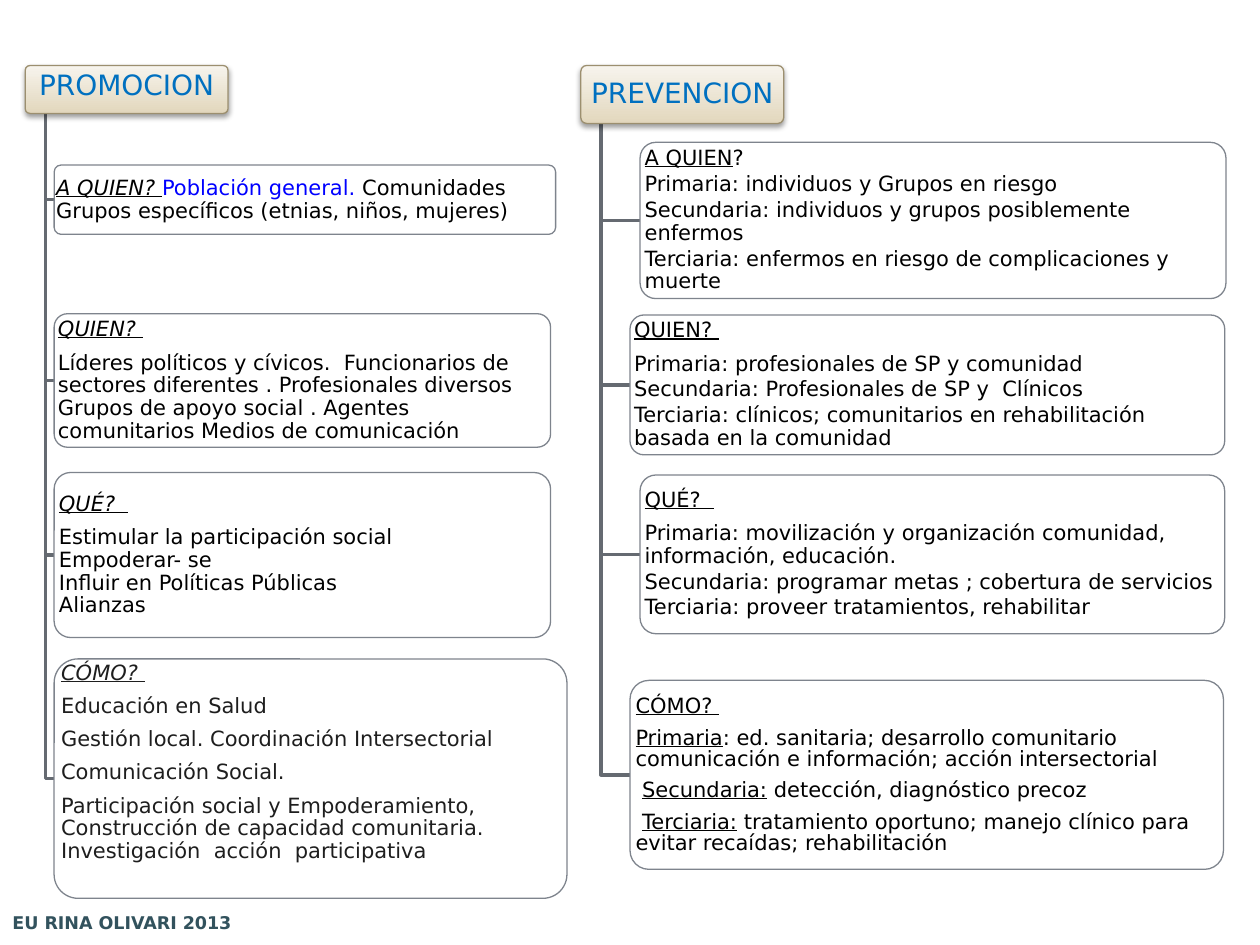
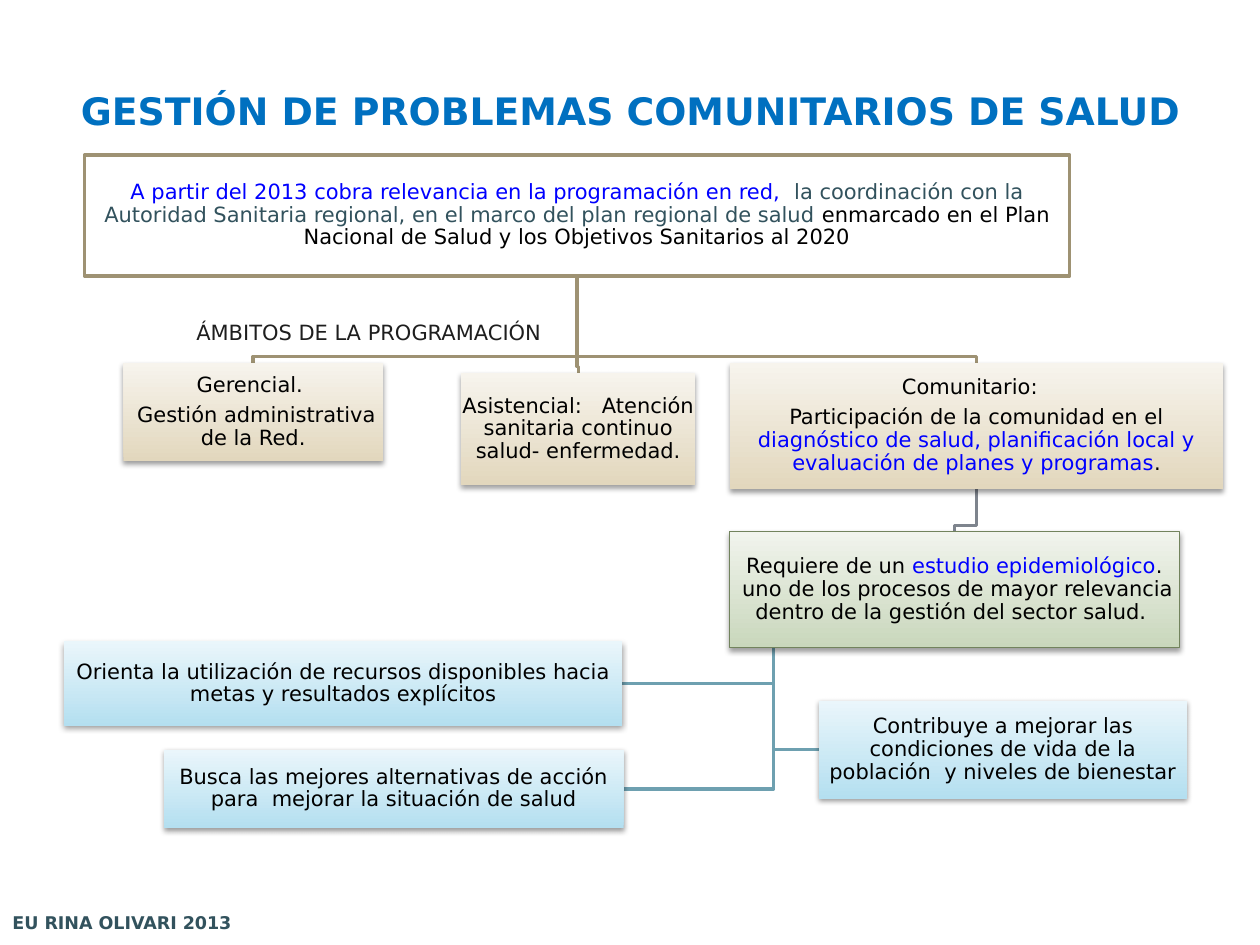
"""Build two slides on health promotion, prevention and community health management."""
import lxml.etree
import pptx
import pptx.dml.color
import pptx.enum.shapes
import pptx.enum.text
import pptx.oxml
import pptx.oxml.ns
import pptx.util

Inches, Pt = pptx.util.Inches, pptx.util.Pt
Color = pptx.dml.color.RGBColor.from_string
ALIGN = pptx.enum.text.PP_ALIGN
ANCHOR = pptx.enum.text.MSO_ANCHOR
SHAPE = pptx.enum.shapes.MSO_SHAPE

BEIGE = ("E2D7BD", "F7F4ED")
THEME = {
    "font": "DejaVu Sans",
    "sizes": {"title": 21.6, "heading": 16, "body": 12, "footer": 10},
    "runs": {
        "plain": {"color": "000000"},
        "dark": {"color": "1E1E1E"},
        "accent": {"color": "0000FF"},
        "muted": {"color": "32525D"},
        "heading": {"color": "0070C0"},
        "title": {"color": "0070C0", "bold": True},
        "footer": {"color": "32525D", "bold": True},
        "underlined": {"color": "000000", "underline": True},
        "question": {"color": "000000", "italic": True, "underline": True},
        "dark question": {"color": "1E1E1E", "italic": True, "underline": True},
    },
    "paragraphs": {
        "single": {},
        "fixed": {"line_spacing": Pt(13), "space_after": Pt(6)},
        "fixed tight": {"line_spacing": Pt(13), "space_after": Pt(0)},
        "compact": {"line_spacing": Pt(12), "space_after": Pt(6)},
        "loose": {"line_spacing": 0.9, "space_after": Pt(6)},
        "close": {"line_spacing": 0.9, "space_after": Pt(1.8)},
        "node": {"line_spacing": 0.9, "space_after": Pt(4.2)},
        "node tight": {"line_spacing": 0.9, "space_after": Pt(0)},
    },
    "looks": {
        "heading": {"round": True, "gradient": BEIGE, "line": ("9C8F6F", 0.75), "align": ALIGN.CENTER,
                    "inset": 0.02, "size": "heading"},
        "card": {"round": True, "fill": "FFFFFF", "line": ("7E848D", 0.75), "inset": 0},
        "tall card": {"round": True, "fill": "FFFFFF", "line": ("7E848D", 0.75), "inset": 0, "bottom": 0.26},
        "root": {"fill": "FFFFFF", "line": ("9E9273", 2), "align": ALIGN.CENTER},
        "scope": {"gradient": BEIGE, "align": ALIGN.CENTER},
        "study": {"gradient": ("C9D7BC", "F1F4ED"), "line": ("72835D", 0.75), "align": ALIGN.CENTER},
        "result": {"gradient": ("B4DFF0", "EAF6FB"), "align": ALIGN.CENTER},
        "label": {"inset": 0.1},
        "footer": {"inset": 0.1, "size": "footer"},
    },
    "elbows": {"column": "656A71", "root": "9E9273", "study": "7E848D", "result": "6EA0B0"},
}


def write_text(frame, paragraphs, size, align=ALIGN.LEFT):
    """Write (format, run, run, ...) tuples, each run being (text, style)."""
    frame.word_wrap = True
    frame.auto_size = pptx.enum.text.MSO_AUTO_SIZE.NONE
    frame.vertical_anchor = ANCHOR.MIDDLE
    for index, (layout, *runs) in enumerate(paragraphs):
        paragraph = frame.add_paragraph() if index else frame.paragraphs[0]
        paragraph.alignment = align
        for name, value in THEME["paragraphs"][layout].items():
            setattr(paragraph, name, value)
        for text, style in runs:
            run = paragraph.add_run()
            run.text = text
            run.font.name = THEME["font"]
            run.font.size = Pt(THEME["sizes"][size])
            for name, value in THEME["runs"][style].items():
                if name == "color":
                    run.font.color.rgb = Color(value)
                else:
                    setattr(run.font, name, value)


def add_box(slide, look_name, area, paragraphs):
    """Add a box in one of the theme's looks."""
    look = THEME["looks"][look_name]
    kind = SHAPE.ROUNDED_RECTANGLE if look.get("round") else SHAPE.RECTANGLE
    shape = slide.shapes.add_shape(kind, *map(Inches, area))
    shape.shadow.inherit = False
    if look.get("round"):
        shape.adjustments[0] = 0.1
    if "gradient" in look:
        shape.fill.gradient()
        shape.fill.gradient_angle = 90
        for stop, color in zip(shape.fill.gradient_stops, look["gradient"]):
            stop.color.rgb = Color(color)
        effects = shape._element.spPr.find(pptx.oxml.ns.qn("a:effectLst"))
        shadow = lxml.etree.SubElement(effects, pptx.oxml.ns.qn("a:outerShdw"), blurRad="40000",
                                       dist="20000", dir="5400000", rotWithShape="0")
        black = lxml.etree.SubElement(shadow, pptx.oxml.ns.qn("a:srgbClr"), val="000000")
        lxml.etree.SubElement(black, pptx.oxml.ns.qn("a:alpha"), val="38000")
    elif "fill" in look:
        shape.fill.solid()
        shape.fill.fore_color.rgb = Color(look["fill"])
    else:
        shape.fill.background()
    if "line" in look:
        color, width = look["line"]
        shape.line.color.rgb = Color(color)
        shape.line.width = Pt(width)
    else:
        shape.line.fill.background()
    frame = shape.text_frame
    for side in ("left", "top", "right", "bottom"):
        setattr(frame, f"margin_{side}", Inches(look.get(side, look.get("inset", 0.01))))
    write_text(frame, paragraphs, look.get("size", "body"), look.get("align", ALIGN.LEFT))


columns = [
    ((0.2, 0.52, 1.61, 0.38), ("fixed", ("PROMOCION", "heading")), [
        ("card", (0.43, 1.31, 3.98, 0.55), [
            ("fixed", ("A QUIEN? ", "question"), ("Población general. ", "accent"),
             ("Comunidades Grupos específicos (etnias, niños, mujeres)", "plain"))]),
        ("card", (0.43, 2.49, 3.94, 1.06), [
            ("fixed", ("QUIEN? ", "question")),
            ("fixed", ("Líderes políticos y cívicos.  Funcionarios de sectores diferentes . Profesionales diversos "
                       "Grupos de apoyo social . Agentes comunitarios Medios de comunicación", "plain"))]),
        ("card", (0.43, 3.75, 3.94, 1.31), [
            ("fixed", ("QUÉ?  ", "question")),
            ("fixed tight", ("Estimular la participación social", "plain")),
            ("fixed tight", ("Empoderar- se", "plain")),
            ("fixed tight", ("Influir en Políticas Públicas", "plain")),
            ("fixed", ("Alianzas", "plain"))]),
        ("tall card", (0.43, 5.23, 4.07, 1.9), [
            ("fixed", ("CÓMO? ", "dark question")),
            ("fixed", ("Educación en Salud", "dark")),
            ("fixed", ("Gestión local. Coordinación Intersectorial", "dark")),
            ("fixed", ("Comunicación Social.", "dark")),
            ("fixed", ("Participación social y Empoderamiento, Construcción de capacidad comunitaria. "
                       "Investigación  acción  participativa", "dark"))]),
    ]),
    ((4.61, 0.52, 1.61, 0.46), ("node", ("PREVENCION", "heading")), [
        ("card", (5.08, 1.13, 4.65, 1.24), [
            ("close", ("A QUIEN", "underlined"), ("?", "plain")),
            ("close", ("Primaria: individuos y Grupos en riesgo", "plain")),
            ("close", ("Secundaria: individuos y grupos posiblemente enfermos", "plain")),
            ("loose", ("Terciaria: enfermos en riesgo de complicaciones y muerte", "plain"))]),
        ("card", (5, 2.5, 4.72, 1.11), [
            ("loose", ("QUIEN? ", "underlined")),
            ("close", ("Primaria: profesionales de SP y comunidad", "plain")),
            ("close", ("Secundaria: Profesionales de SP y  Clínicos", "plain")),
            ("loose", ("Terciaria: clínicos; comunitarios en rehabilitación basada en la comunidad", "plain"))]),
        ("card", (5.08, 3.77, 4.64, 1.26), [
            ("loose", ("QUÉ?  ", "underlined")),
            ("close", ("Primaria: movilización y organización comunidad, información, educación.", "plain")),
            ("close", ("Secundaria: programar metas ; cobertura de servicios", "plain")),
            ("loose", ("Terciaria: proveer tratamientos, rehabilitar", "plain"))]),
        ("card", (5, 5.4, 4.71, 1.5), [
            ("loose", ("CÓMO? ", "underlined")),
            ("compact", ("Primaria", "underlined"),
             (": ed. sanitaria; desarrollo comunitario comunicación e información; acción intersectorial", "plain")),
            ("compact", (" ", "plain"), ("Secundaria:", "underlined"), (" detección, diagnóstico precoz", "plain")),
            ("compact", (" ", "plain"), ("Terciaria:", "underlined"),
             (" tratamiento oportuno; manejo clínico para evitar recaídas; rehabilitación", "plain"))]),
    ]),
]
column_boxes, column_elbows = [], []
for heading_area, heading, cards in columns:
    left, top, width, height = heading_area
    trunk, start = left + 0.16, top + height
    column_boxes += [("heading", heading_area, [heading]), *cards]
    for look, (card_left, card_top, card_width, card_height), paragraphs in cards:
        middle = card_top + card_height / 2
        column_elbows.append(("column", [(trunk, start), (trunk, middle), (card_left, middle)]))

root = (0.67, 1.23, 7.82, 0.96)
managerial = (0.98, 2.88, 2.06, 0.78)
clinical = (3.66, 2.96, 1.86, 0.89)
community = (5.79, 2.88, 3.92, 1)
study = (5.79, 4.22, 3.57, 0.92)
resources = (0.51, 5.09, 4.43, 0.67)
alternatives = (1.3, 5.95, 3.65, 0.62)
wellbeing = (6.5, 5.56, 2.92, 0.78)
diagram_boxes = [
    ("root", root, [
        ("node", ("A partir del 2013 cobra relevancia en la programación en red,  ", "accent"),
         ("la coordinación con la Autoridad Sanitaria regional, en el marco del plan regional de salud ", "muted"),
         ("enmarcado en el Plan Nacional de Salud y los Objetivos Sanitarios al 2020", "plain"))]),
    ("scope", managerial, [
        ("node", ("Gerencial. ", "plain")),
        ("node", (" Gestión administrativa de la Red.", "plain"))]),
    ("scope", clinical, [
        ("node", ("Asistencial:   Atención sanitaria continuo salud- enfermedad.", "plain"))]),
    ("scope", community, [
        ("node", ("Comunitario:  ", "plain")),
        ("node", ("Participación de la comunidad en el ", "plain"),
         ("diagnóstico de salud, planificación local y evaluación de planes y programas", "accent"),
         (".", "plain"))]),
    ("study", study, [
        ("node tight", ("Requiere de un ", "plain"), ("estudio epidemiológico", "accent"), (".", "plain")),
        ("node tight", (" uno de los procesos de mayor relevancia dentro de la gestión del sector salud. ", "plain"))]),
    ("result", resources, [
        ("node", ("Orienta la utilización de recursos disponibles hacia metas y resultados explícitos", "plain"))]),
    ("result", alternatives, [
        ("node", ("Busca las mejores alternativas de acción para  mejorar la situación de salud", "plain"))]),
    ("result", wellbeing, [
        ("node", ("Contribuye a mejorar las condiciones de vida de la población  y niveles de bienestar", "plain"))]),
    ("label", (1.46, 2.49, 3.94, 0.3), [("single", ("ÁMBITOS DE LA PROGRAMACIÓN", "dark"))]),
]
diagram_elbows = []
trunk, start = study[0] + 0.35, study[1] + study[3]
for left, top, width, height in (wellbeing, alternatives, resources):
    middle = top + height / 2
    side = left if left > trunk else left + width
    diagram_elbows.append(("result", [(trunk, start), (trunk, middle), (side, middle)]))
for color, parent, child in (("study", community, study), ("root", root, community),
                             ("root", root, clinical), ("root", root, managerial)):
    start_x, end_x = (area[0] + area[2] / 2 for area in (parent, child))
    bus = child[1] - 0.05
    diagram_elbows.append((color, [(start_x, parent[1] + parent[3]), (start_x, bus),
                                   (end_x, bus), (end_x, child[1])]))

presentation = pptx.Presentation()
presentation.slide_width = Inches(10)
presentation.slide_height = Inches(7.5)
footer = ("footer", (0, 7.14, 3.11, 0.36), [("single", ("EU RINA OLIVARI 2013", "footer"))])
slides = [
    (6, None, column_elbows, column_boxes),
    (5, "GESTIÓN DE PROBLEMAS COMUNITARIOS DE SALUD", diagram_elbows, diagram_boxes),
]
for layout, title_text, elbows, boxes in slides:
    slide = presentation.slides.add_slide(presentation.slide_layouts[layout])
    for color, points in elbows:
        (first, *others) = [(Inches(x), Inches(y)) for x, y in points]
        builder = slide.shapes.build_freeform(*first)
        builder.add_line_segments(others, close=False)
        elbow = builder.convert_to_shape()
        elbow.shadow.inherit = False
        elbow.fill.background()
        elbow.line.color.rgb = Color(THEME["elbows"][color])
        elbow.line.width = Pt(2)
    for look, area, paragraphs in [*boxes, footer]:
        add_box(slide, look, area, paragraphs)
    if title_text:
        title = slide.shapes.title
        for name, value in zip(("left", "top", "width", "height"), (0.2, 0.44, 9.61, 0.87)):
            setattr(title, name, Inches(value))
        write_text(title.text_frame, [("single", (title_text, "title"))], "title", ALIGN.CENTER)

presentation.save("out.pptx")
